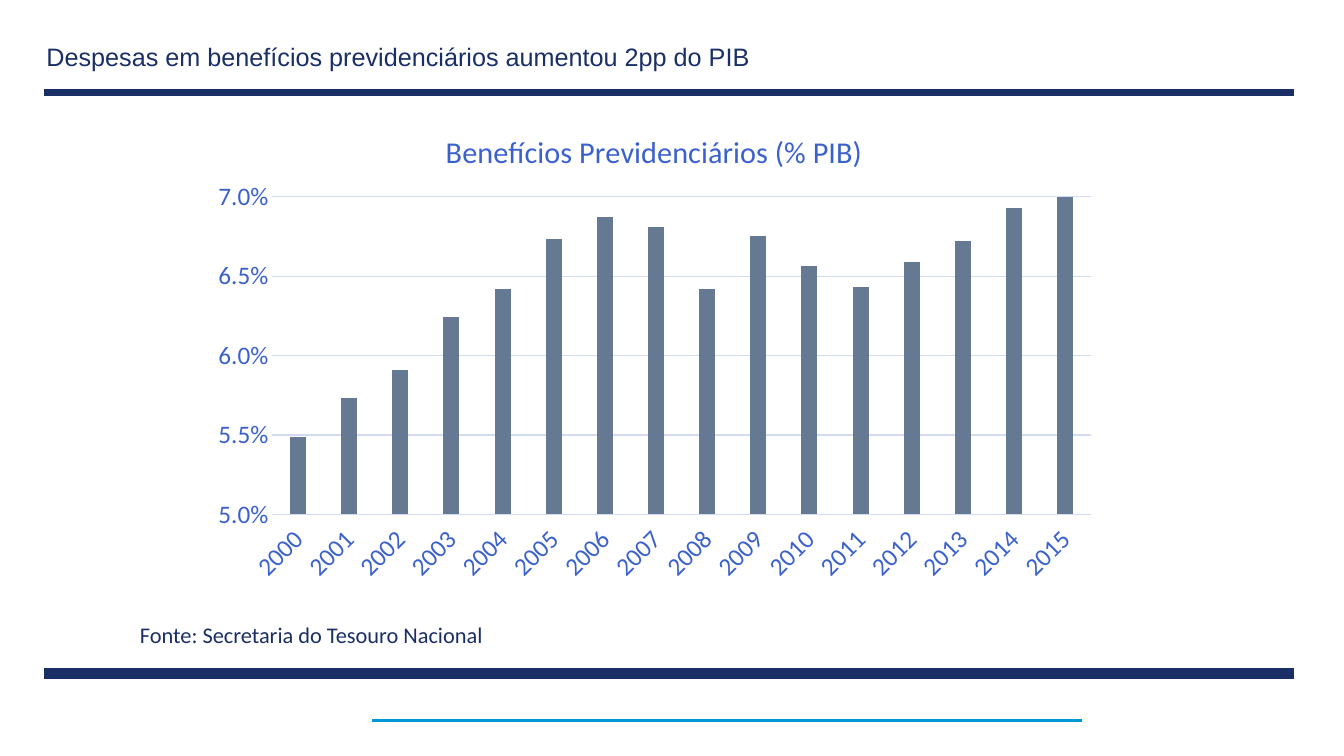
from dataclasses import dataclass

from lxml import etree
from pptx import Presentation
from pptx.chart.data import CategoryChartData
from pptx.dml.color import RGBColor
from pptx.enum.chart import XL_CHART_TYPE as ChartType, XL_TICK_LABEL_POSITION as LabelPos, XL_TICK_MARK as Tick
from pptx.enum.shapes import MSO_CONNECTOR as Connector
from pptx.enum.text import MSO_ANCHOR as Anchor, MSO_AUTO_SIZE as AutoSize, PP_ALIGN as Align
from pptx.oxml import parse_xml
from pptx.oxml.ns import nsdecls, qn
from pptx.util import Emu, Pt

NAVY, CYAN, BLUE, PALE, SLATE = "1B2F67", "0097D6", "3B61CC", "D2DBF3", "657992"
FIRST_YEAR = 2000
BENEFITS = [5.49, 5.73, 5.91, 6.24, 6.42, 6.73, 6.87, 6.81,
            6.42, 6.75, 6.56, 6.43, 6.59, 6.72, 6.93, 7.39]


@dataclass
class Rule:
    left: int
    right: int
    y: int
    color: str
    weight: int


RULES = [
    Rule(44, 1283, 92, NAVY, 5),
    Rule(44, 1283, 668, NAVY, 8),
    Rule(369, 1073, 715, CYAN, 2),
]


def px(n: int) -> Emu:
    """One px is a hundredth of an inch."""
    return Emu(n * 9144)


def rgb(color: str) -> RGBColor:
    return RGBColor.from_string(color)


def set_font(font, name: str, size: float, color: str) -> None:
    font.name, font.size, font.bold = name, Pt(size), False
    font.color.rgb = rgb(color)


def set_line(line, color: str, weight: float) -> None:
    line.color.rgb = rgb(color)
    line.width = Pt(weight)


def add_rule(s, rule: Rule) -> None:
    c = s.shapes.add_connector(Connector.STRAIGHT, px(rule.left), px(rule.y),
                               px(rule.right), px(rule.y))
    set_line(c.line, rule.color, rule.weight)
    etree.SubElement(c._element.spPr, qn("a:effectLst"))


def add_title(s, text: str) -> None:
    sp = s.shapes.title
    sp.left, sp.top, sp.width, sp.height = px(36), px(42), px(866), px(31)
    tf = sp.text_frame
    tf.text = text
    tf.auto_size, tf.vertical_anchor = AutoSize.NONE, Anchor.MIDDLE
    p = tf.paragraphs[0]
    p.alignment, p.line_spacing = Align.LEFT, 0.9
    set_font(p.font, "Arial", 18, NAVY)


def add_source(s, text: str) -> None:
    tf = s.shapes.add_textbox(px(129), px(611), px(926), px(37)).text_frame
    tf.word_wrap, tf.auto_size = True, AutoSize.SHAPE_TO_FIT_TEXT
    tf.text = text
    set_font(tf.paragraphs[0].font, "Calibri", 16, NAVY)


def place_plot(chart, x: float, y: float, w: float, h: float) -> None:
    """Fix the inner plot area, in fractions of the chart."""
    plot_area = chart._chartSpace.chart.plotArea
    for old in plot_area.findall(qn("c:layout")):
        plot_area.remove(old)
    sizes = "".join(f'<c:{tag} val="{val}"/>' for tag, val in zip("xywh", (x, y, w, h)))
    plot_area.insert(0, parse_xml(
        f'<c:layout {nsdecls("c")}><c:manualLayout><c:layoutTarget val="inner"/>'
        f'<c:xMode val="edge"/><c:yMode val="edge"/>{sizes}</c:manualLayout></c:layout>'))


def add_benefits_chart(s, title: str) -> None:
    data = CategoryChartData(number_format="0.0%")
    data.categories = [str(FIRST_YEAR + i) for i in range(len(BENEFITS))]
    data.add_series("Series 1", [round(v / 100, 4) for v in BENEFITS])
    chart = s.shapes.add_chart(ChartType.COLUMN_CLUSTERED, px(198), px(109),
                               px(902), px(478), data).chart
    set_font(chart.font, "Calibri", 18, NAVY)
    chart.has_legend = False
    chart.has_title = True
    chart.chart_title.include_in_layout = False
    p = chart.chart_title.text_frame.paragraphs[0]
    p.text = title
    set_font(p.font, "Calibri", 21.6, BLUE)

    plot = chart.plots[0]
    plot.gap_width, plot.overlap, plot.vary_by_categories = 219, -27, False
    fill = plot.series[0].format.fill
    fill.solid()
    fill.fore_color.rgb = rgb(SLATE)

    years, share = chart.category_axis, chart.value_axis
    for axis in (years, share):
        axis.major_tick_mark = axis.minor_tick_mark = Tick.NONE
        set_font(axis.tick_labels.font, "Calibri", 18, BLUE)
    years.tick_label_position = LabelPos.LOW
    set_line(years.format.line, PALE, 0.75)
    years._element.txPr.find(qn("a:bodyPr")).set("rot", "-2700000")
    share.minimum_scale, share.maximum_scale, share.major_unit = 0.05, 0.07, 0.005
    share.tick_labels.number_format = "0.0%"
    share.tick_labels.number_format_is_linked = False
    share.format.line.fill.background()
    set_line(share.major_gridlines.format.line, PALE, 0.75)
    place_plot(chart, 0.08, 0.18, 0.9, 0.66)


def main() -> None:
    prs = Presentation()
    prs.slide_width, prs.slide_height = px(1333), px(750)
    s = prs.slides.add_slide(prs.slide_layouts[5])
    for rule in RULES:
        add_rule(s, rule)
    add_title(s, "Despesas em benefícios previdenciários aumentou 2pp do PIB")
    add_benefits_chart(s, "Benefícios Previdenciários (% PIB)")
    add_source(s, "Fonte: Secretaria do Tesouro Nacional")
    prs.save("out.pptx")


if __name__ == "__main__":
    main()
